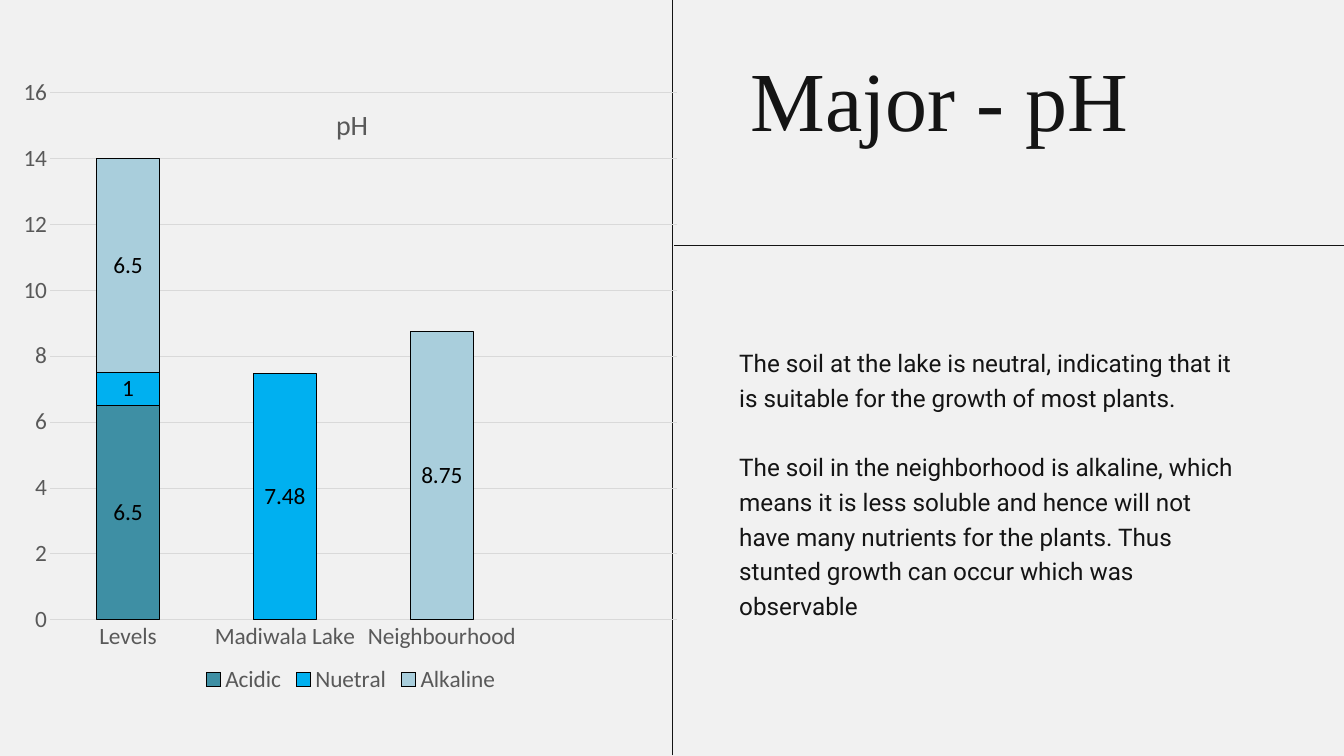
"""Build the soil pH slide: a stacked column chart beside its findings."""
from dataclasses import dataclass

from lxml import etree
from pptx import Presentation
from pptx import util as u
from pptx.chart import data
from pptx.dml.color import RGBColor
from pptx.enum import chart as charts, shapes, text
from pptx.oxml import ns


@dataclass(frozen=True)
class Theme:
    """Colours, fonts and type sizes of the slide."""
    background: str = "F1F1F1"
    ink: str = "141414"
    black: str = "000000"
    grey: str = "595959"
    grid: str = "D9D9D9"
    series: tuple = ("3E8FA4", "00B0F0", "A9CEDC")
    title_font: str = "Times New Roman"
    body_font: str = "Roboto"
    chart_font: str = "Calibri"
    title_size: float = 90
    body_size: float = 26
    chart_title_size: float = 30
    chart_size: float = 25


THEME = Theme()
CATEGORIES = ("Levels", "Madiwala Lake", "Neighbourhood", "")
SERIES = {
    "Acidic": (6.5, None, None, None),
    "Nuetral": (1, 7.48, None, None),
    "Alkaline": (6.5, None, 8.75, None),
}
FINDINGS = (
    "The soil at the lake is neutral, indicating that it is suitable for "
    "the growth of most plants.",
    "The soil in the neighborhood is alkaline, which means it is less soluble "
    "and hence will not have many nutrients for the plants. Thus stunted "
    "growth can occur which was observable",
)


def style_font(font, name, size, color):
    """Set the typeface, size and colour of a font."""
    font.name, font.size, font.bold = name, u.Pt(size), False
    font.color.rgb = RGBColor.from_string(color)


def style_line(line, color, width):
    """Set the colour and width of a line."""
    line.color.rgb = RGBColor.from_string(color)
    line.width = u.Pt(width)


def add_rule(slide, start, end):
    """Draw a dividing line between two points."""
    connector = slide.shapes.add_connector(
        shapes.MSO_CONNECTOR.STRAIGHT, *map(u.Inches, start + end))
    style_line(connector.line, THEME.ink, 1.5)
    etree.SubElement(connector._element.spPr, ns.qn("a:effectLst"))


def fill_placeholder(shape, box, paragraphs, font, size, spacing):
    """Place a placeholder and write plain left-aligned paragraphs in it."""
    shape.left, shape.top, shape.width, shape.height = map(u.Inches, box)
    frame = shape.text_frame
    frame.margin_left = frame.margin_right = 0
    frame.margin_top = frame.margin_bottom = 0
    frame.vertical_anchor = text.MSO_ANCHOR.TOP
    frame.word_wrap = True
    frame.auto_size = text.MSO_AUTO_SIZE.NONE
    frame.text = "\n".join(paragraphs)
    for index, paragraph in enumerate(frame.paragraphs):
        properties = paragraph._p.get_or_add_pPr()
        properties.set("marL", "0")
        properties.set("indent", "0")
        etree.SubElement(properties, ns.qn("a:buNone"))
        paragraph.alignment = text.PP_ALIGN.LEFT
        paragraph.line_spacing = u.Pt(spacing)
        paragraph.space_before = u.Pt(spacing if index else 0)
        style_font(paragraph.font, font, size, THEME.ink)


def set_layout(parent, index, **values):
    """Give a chart part a manual layout as fractions of the chart."""
    for old in parent.findall(ns.qn("c:layout")):
        parent.remove(old)
    layout = etree.Element(ns.qn("c:layout"))
    manual = etree.SubElement(layout, ns.qn("c:manualLayout"))
    for tag, value in values.items():
        etree.SubElement(manual, ns.qn(f"c:{tag}")).set("val", str(value))
    parent.insert(index, layout)


def style_axes(chart):
    """Format the category axis, the value axis and the gridlines."""
    for axis in (chart.category_axis, chart.value_axis):
        axis.major_tick_mark = axis.minor_tick_mark = charts.XL_TICK_MARK.NONE
        style_font(axis.tick_labels.font, THEME.chart_font,
                   THEME.chart_size, THEME.grey)
    style_line(chart.category_axis.format.line, THEME.grid, 0.75)
    values = chart.value_axis
    values.minimum_scale, values.maximum_scale, values.major_unit = 0, 16, 2
    values.format.line.fill.background()
    style_line(values.major_gridlines.format.line, THEME.grid, 0.75)


def style_series(plot):
    """Colour the stacked columns and label them in the centre."""
    plot.gap_width, plot.overlap = 150, 100
    plot.vary_by_categories = False
    for series, color in zip(plot.series, THEME.series):
        series.format.fill.solid()
        series.format.fill.fore_color.rgb = RGBColor.from_string(color)
        style_line(series.format.line, THEME.black, 0.75)
        labels = series.data_labels
        labels.show_value = True
        labels.position = charts.XL_LABEL_POSITION.CENTER
        style_font(labels.font, THEME.chart_font, THEME.chart_size, THEME.black)


def add_ph_chart(slide, box):
    """Add the stacked column chart of pH levels."""
    chart_data = data.CategoryChartData()
    chart_data.categories = CATEGORIES
    for name, values in SERIES.items():
        chart_data.add_series(name, values)
    chart = slide.shapes.add_chart(
        charts.XL_CHART_TYPE.COLUMN_STACKED, *map(u.Inches, box), chart_data).chart
    style_font(chart.font, THEME.chart_font, THEME.chart_size, THEME.black)
    title = chart.chart_title
    title.text_frame.text = "pH"
    style_font(title.text_frame.paragraphs[0].font, THEME.chart_font,
               THEME.chart_title_size, THEME.grey)
    set_layout(title._element, 1, xMode="edge", yMode="edge", x=0.47, y=0.04)
    set_layout(chart._chartSpace.chart.plotArea, 0, layoutTarget="inner",
               xMode="edge", yMode="edge", x=0.071, y=0.027, w=0.961, h=0.847)
    chart.has_legend = True
    chart.legend.position = charts.XL_LEGEND_POSITION.BOTTOM
    chart.legend.include_in_layout = False
    style_font(chart.legend.font, THEME.chart_font, THEME.chart_size, THEME.grey)
    style_axes(chart)
    style_series(chart.plots[0])


def main():
    """Assemble and save the slide."""
    presentation = Presentation()
    presentation.slide_width = u.Inches(20)
    presentation.slide_height = u.Inches(11.25)
    slide = presentation.slides.add_slide(presentation.slide_layouts[1])
    slide.background.fill.solid()
    slide.background.fill.fore_color.rgb = RGBColor.from_string(THEME.background)
    title, body = slide.placeholders
    add_rule(slide, (10.01, 11.24), (10.01, 0))
    add_rule(slide, (10.03, 3.65), (20, 3.65))
    fill_placeholder(body, (11, 5.1, 7.55, 4.11), FINDINGS,
                     THEME.body_font, THEME.body_size, 37.2)
    add_ph_chart(slide, (0.35, 1.13, 9.73, 9.26))
    fill_placeholder(title, (11.17, 0.7, 7.7, 1.52), ["Major - pH"],
                     THEME.title_font, THEME.title_size, 108)
    presentation.save("out.pptx")


if __name__ == "__main__":
    main()
